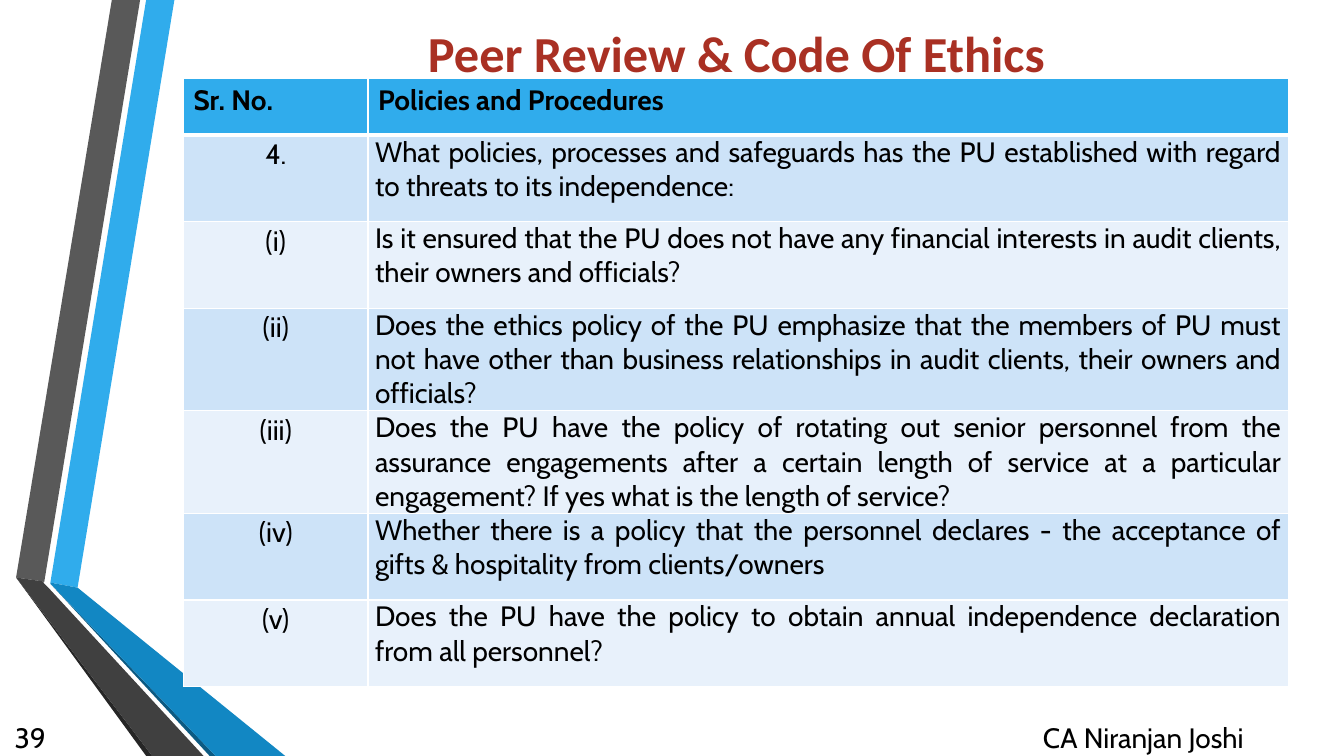
from dataclasses import dataclass

from lxml.etree import SubElement
from pptx import Presentation
from pptx.dml.color import RGBColor
from pptx.enum.text import MSO_ANCHOR as Anchor, MSO_AUTO_SIZE as AutoSize, PP_ALIGN as Align
from pptx.oxml.ns import qn
from pptx.slide import Slide
from pptx.table import _Cell as Cell
from pptx.text.text import TextFrame
from pptx.util import Emu, Pt

EMU_PER_PX = 9144  # 100 px to the inch


@dataclass(frozen=True)
class Theme:
    heading_font: str = "Calibri"
    body_font: str = "Cabin"
    heading_size: int = 36
    body_size: int = 20
    heading: str = "A93023"
    text: str = "000000"
    header_fill: str = "30ACEC"
    bands: tuple[str, str] = ("CDE3F8", "E8F1FB")
    border: str = "FFFFFF"


@dataclass(frozen=True)
class Ribbon:
    color: str
    points: tuple[tuple[int, int], ...]


@dataclass(frozen=True)
class Box:
    left: int
    top: int
    width: int
    height: int

    def emu(self) -> tuple[Emu, Emu, Emu, Emu]:
        return px(self.left), px(self.top), px(self.width), px(self.height)


@dataclass(frozen=True)
class Label:
    text: str
    box: Box
    anchor: Anchor


@dataclass(frozen=True)
class Policy:
    number: str
    question: str


THEME = Theme()

RIBBONS = (
    Ribbon("30ACEC", ((50, 578), (77, 583), (173, 0), (145, 0))),
    Ribbon("595959", ((139, 0), (111, 0), (16, 573), (44, 577))),
    Ribbon("262626", ((16, 573), (145, 750), (151, 750))),
    Ribbon("0C5A82", ((50, 579), (208, 750), (214, 750))),
    Ribbon("1287C3", ((50, 579), (214, 750), (283, 750), (77, 583), (50, 578))),
    Ribbon("404040", ((202, 750), (48, 583), (43, 578), (44, 577), (16, 573), (151, 750))),
)

TITLE = "Peer Review & Code Of Ethics"
TITLE_BOX = Box(217, 17, 1027, 70)

HEADERS = ("Sr. No.", "Policies and Procedures")
POLICIES = (
    Policy("4.", "What policies, processes and safeguards has the PU established "
                 "with regard to threats to its independence:"),
    Policy("(i)", "Is it ensured that the PU does not have any financial interests "
                  "in audit clients, their owners and officials?"),
    Policy("(ii)", "Does the ethics policy of the PU emphasize that the members of PU must "
                   "not have other than business relationships in audit clients, "
                   "their owners and officials?"),
    Policy("(iii)", "Does the PU have the policy of rotating out senior personnel from the "
                    "assurance engagements after a certain length of service at a particular "
                    "engagement? If yes what is the length of service?"),
    Policy("(iv)", "Whether there is a policy that the personnel declares - the acceptance of "
                   "gifts & hospitality from clients/owners"),
    Policy("(v)", "Does the PU have the policy to obtain annual independence declaration "
                  "from all personnel?"),
)
COLUMN_WIDTHS = (183, 913)
HEADER_HEIGHT, ROW_HEIGHT = 56, 86
TABLE_BOX = Box(182, 78, sum(COLUMN_WIDTHS), HEADER_HEIGHT + ROW_HEIGHT * len(POLICIES))

LABELS = (
    Label("39", Box(0, 711, 60, 40), Anchor.MIDDLE),
    Label("CA Niranjan Joshi", Box(959, 710, 350, 40), Anchor.TOP),
)


def px(n: int) -> Emu:
    return Emu(n * EMU_PER_PX)


def rgb(color: str) -> RGBColor:
    return RGBColor.from_string(color)


def write(tf: TextFrame, text: str, align: Align, font: str = THEME.body_font,
          size: int = THEME.body_size, color: str = THEME.text, bold: bool = False) -> None:
    p = tf.paragraphs[0]
    p.text = text
    p.alignment = align
    f = p.runs[0].font
    f.name, f.size, f.bold = font, Pt(size), bold
    f.color.rgb = rgb(color)


def draw_ribbon(s: Slide, ribbon: Ribbon) -> None:
    start, *rest = ribbon.points
    builder = s.shapes.build_freeform(*start, scale=EMU_PER_PX)
    builder.add_line_segments(rest, close=True)
    sp = builder.convert_to_shape()
    sp.shadow.inherit = False
    sp.fill.solid()
    sp.fill.fore_color.rgb = rgb(ribbon.color)
    sp.line.fill.background()


def draw_title(s: Slide) -> None:
    sp = s.shapes.title
    sp.left, sp.top, sp.width, sp.height = TITLE_BOX.emu()
    tf = sp.text_frame
    tf.auto_size, tf.vertical_anchor = AutoSize.NONE, Anchor.MIDDLE
    write(tf, TITLE, Align.CENTER, THEME.heading_font, THEME.heading_size, THEME.heading, True)


def draw_label(s: Slide, label: Label) -> None:
    tf = s.shapes.add_textbox(*label.box.emu()).text_frame
    tf.word_wrap = True
    tf.vertical_anchor = label.anchor
    write(tf, label.text, Align.CENTER)


def style_cell(cell: Cell, color: str, top: int = 1, bottom: int = 1) -> None:
    """Fill the cell and give it borders; top and bottom are widths in points."""
    tc_pr = cell._tc.get_or_add_tcPr()
    for side, width in (("L", 1), ("R", 1), ("T", top), ("B", bottom)):
        ln = SubElement(tc_pr, qn(f"a:ln{side}"), w=str(Pt(width)))
        SubElement(SubElement(ln, qn("a:solidFill")), qn("a:srgbClr"), val=THEME.border)
    cell.fill.solid()
    cell.fill.fore_color.rgb = rgb(color)


def draw_table(s: Slide) -> None:
    table = s.shapes.add_table(len(POLICIES) + 1, len(HEADERS), *TABLE_BOX.emu()).table
    table.horz_banding = False
    for column, width in zip(table.columns, COLUMN_WIDTHS):
        column.width = px(width)

    table.rows[0].height = px(HEADER_HEIGHT)
    for cell, header in zip(table.rows[0].cells, HEADERS):
        style_cell(cell, THEME.header_fill, bottom=3)
        write(cell.text_frame, header, Align.LEFT, bold=True)

    for i, policy in enumerate(POLICIES):
        row = table.rows[i + 1]
        row.height = px(ROW_HEIGHT)
        number, question = row.cells
        for cell in (number, question):
            style_cell(cell, THEME.bands[i % 2], top=3 if i == 0 else 1)
            cell.margin_left = cell.margin_right = px(7)
            cell.margin_top = cell.margin_bottom = 0
        write(number.text_frame, policy.number, Align.CENTER)
        p = number.text_frame.paragraphs[0]
        p.line_spacing, p.space_after = 1.07, Pt(8)
        write(question.text_frame, policy.question, Align.JUSTIFY)


def main() -> None:
    prs = Presentation()
    prs.slide_width, prs.slide_height = px(1333), px(750)
    s = prs.slides.add_slide(prs.slide_layouts[5])
    for ribbon in RIBBONS:
        draw_ribbon(s, ribbon)
    draw_title(s)
    draw_table(s)
    for label in LABELS:
        draw_label(s, label)
    prs.save("out.pptx")


if __name__ == "__main__":
    main()
